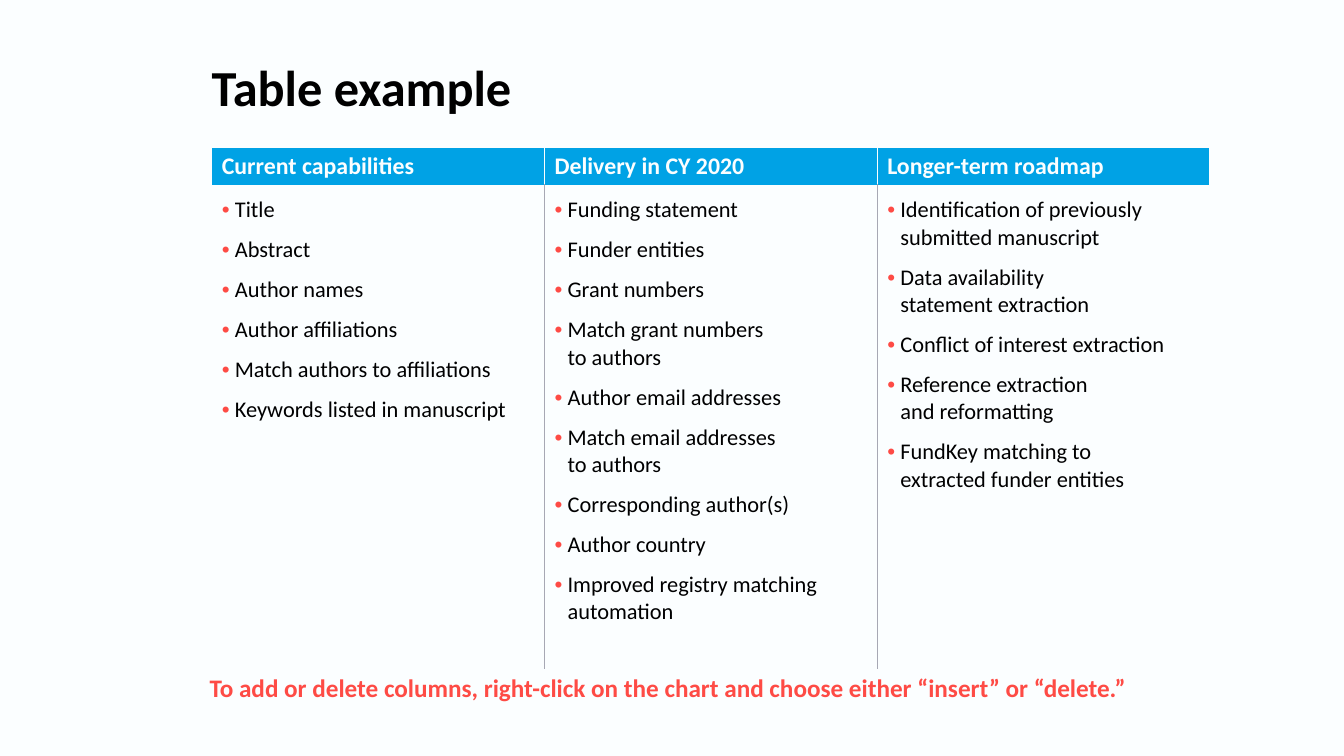
import copy
from dataclasses import dataclass

import pptx
import pptx.dml.color
import pptx.enum.text
import pptx.oxml
import pptx.oxml.ns
import pptx.util
from pptx.util import Inches

qn = pptx.oxml.ns.qn
NS = pptx.oxml.ns.nsdecls("a")
ANCHOR = pptx.enum.text.MSO_ANCHOR


@dataclass(frozen=True)
class Theme:
    font: str = "Calibri"
    paper: str = "FBFEFF"
    ink: str = "000000"
    header: str = "00A2E5"
    accent: str = "FE4B45"
    rule: str = "A7A8B4"
    title_size: float = 36
    note_size: float = 18
    header_size: float = 17
    body_size: float = 16


def rgb(value):
    return pptx.dml.color.RGBColor.from_string(value)


def write(p, text, font, size, color, bold=False, before=None, spacing=None,
          indent=0, bullet=None):
    p.text = text
    if before is not None:
        p.space_before = pptx.util.Pt(before)
    if spacing is not None:
        p.line_spacing = spacing
    if indent:
        pPr = p._p.get_or_add_pPr()
        pPr.set("marL", str(Inches(indent)))
        pPr.set("indent", str(-Inches(indent)))
        if bullet:
            for xml in (
                f'<a:buClr {NS}><a:srgbClr val="{bullet}"/></a:buClr>',
                f'<a:buFont {NS} typeface="Arial"/>',
                f'<a:buChar {NS} char="•"/>',
            ):
                pPr.append(pptx.oxml.parse_xml(xml))
    for r in p.runs:
        r.font.name = font
        r.font.size = pptx.util.Pt(size)
        r.font.bold = bold
        r.font.color.rgb = rgb(color)
    for br in p._p.findall(qn("a:br")):
        br.append(copy.deepcopy(p.runs[0]._r.rPr))


class SlideBuilder:
    def __init__(self, prs, theme):
        self.theme = theme
        self.s = prs.slides.add_slide(prs.slide_layouts[6])
        self.s.background.fill.solid()
        self.s.background.fill.fore_color.rgb = rgb(theme.paper)

    def text(self, x, y, w, h, text, margins=(0, 0), **style):
        sp = self.s.shapes.add_textbox(Inches(x), Inches(y), Inches(w), Inches(h))
        tf = sp.text_frame
        tf.word_wrap = True
        tf.vertical_anchor = ANCHOR.TOP
        tf.margin_left = tf.margin_right = Inches(margins[0])
        tf.margin_top = tf.margin_bottom = Inches(margins[1])
        write(tf.paragraphs[0], text, self.theme.font, **style)

    def border(self, cell, **edges):
        tcPr = cell._tc.get_or_add_tcPr()
        for side in "LRTB":
            color, width = edges[side]
            tcPr.append(pptx.oxml.parse_xml(
                f'<a:ln{side} {NS} w="{pptx.util.Pt(width)}"><a:solidFill>'
                f'<a:srgbClr val="{color}"/></a:solidFill></a:ln{side}>'))

    def cell(self, cell, fill, top, anchor, edges):
        self.border(cell, **edges)
        cell.fill.solid()
        cell.fill.fore_color.rgb = rgb(fill)
        cell.vertical_anchor = anchor
        cell.margin_left = cell.margin_right = Inches(0.1)
        cell.margin_top = Inches(top)
        cell.margin_bottom = Inches(0.05)

    def table(self, x, y, col_width, row_heights, columns):
        t = self.theme
        table = self.s.shapes.add_table(
            2, len(columns), Inches(x), Inches(y),
            Inches(col_width * len(columns)), Inches(sum(row_heights))).table
        table.first_row = table.horz_banding = False
        for row, height in zip(table.rows, row_heights):
            row.height = Inches(height)
        light, rule = (t.paper, 1), (t.rule, 0.75)
        base = {"L": light, "R": light, "T": light, "B": (t.paper, 3)}
        last = len(columns) - 1
        for i, (heading, items) in enumerate(columns.items()):
            table.columns[i].width = Inches(col_width)
            head, body = table.cell(0, i), table.cell(1, i)
            self.cell(head, t.header, 0.05, ANCHOR.MIDDLE, base)
            write(head.text_frame.paragraphs[0], heading, t.font,
                  t.header_size, t.paper, bold=True)
            edges = base | {"L": rule if i > 0 else light,
                            "R": rule if i < last else light}
            self.cell(body, t.paper, 0.1, ANCHOR.TOP, edges)
            tf = body.text_frame
            for n, item in enumerate(items):
                p = tf.add_paragraph() if n else tf.paragraphs[0]
                write(p, item, t.font, t.body_size, t.ink,
                      before=9 if n else None, indent=0.13, bullet=t.accent)


COLUMNS = {
    "Current capabilities": [
        "Title", "Abstract", "Author names", "Author affiliations",
        "Match authors to affiliations", "Keywords listed in manuscript",
    ],
    "Delivery in CY 2020": [
        "Funding statement", "Funder entities", "Grant numbers",
        "Match grant numbers\nto authors", "Author email addresses",
        "Match email addresses\nto authors", "Corresponding author(s)",
        "Author country", "Improved registry matching automation",
    ],
    "Longer-term roadmap": [
        "Identification of previously submitted manuscript",
        "Data availability\nstatement extraction",
        "Conflict of interest extraction",
        "Reference extraction\nand reformatting",
        "FundKey matching to\nextracted funder entities",
    ],
}


def main():
    prs = pptx.Presentation()
    prs.slide_width, prs.slide_height = Inches(13.33), Inches(7.5)
    theme = Theme()
    slide = SlideBuilder(prs, theme)
    slide.table(2.1, 1.46, 3.3, (0.37, 4.77), COLUMNS)
    slide.text(2.1, 0.62, 10.02, 0.72, "Table example", size=theme.title_size,
               color=theme.ink, bold=True, spacing=0.9)
    slide.text(1.98, 6.62, 10.02, 0.4,
               "To add or delete columns, right-click on the chart and choose "
               "either “insert” or “delete.”", margins=(0.1, 0.05),
               size=theme.note_size, color=theme.accent, bold=True, indent=0.14)
    prs.save("out.pptx")


if __name__ == "__main__":
    main()
